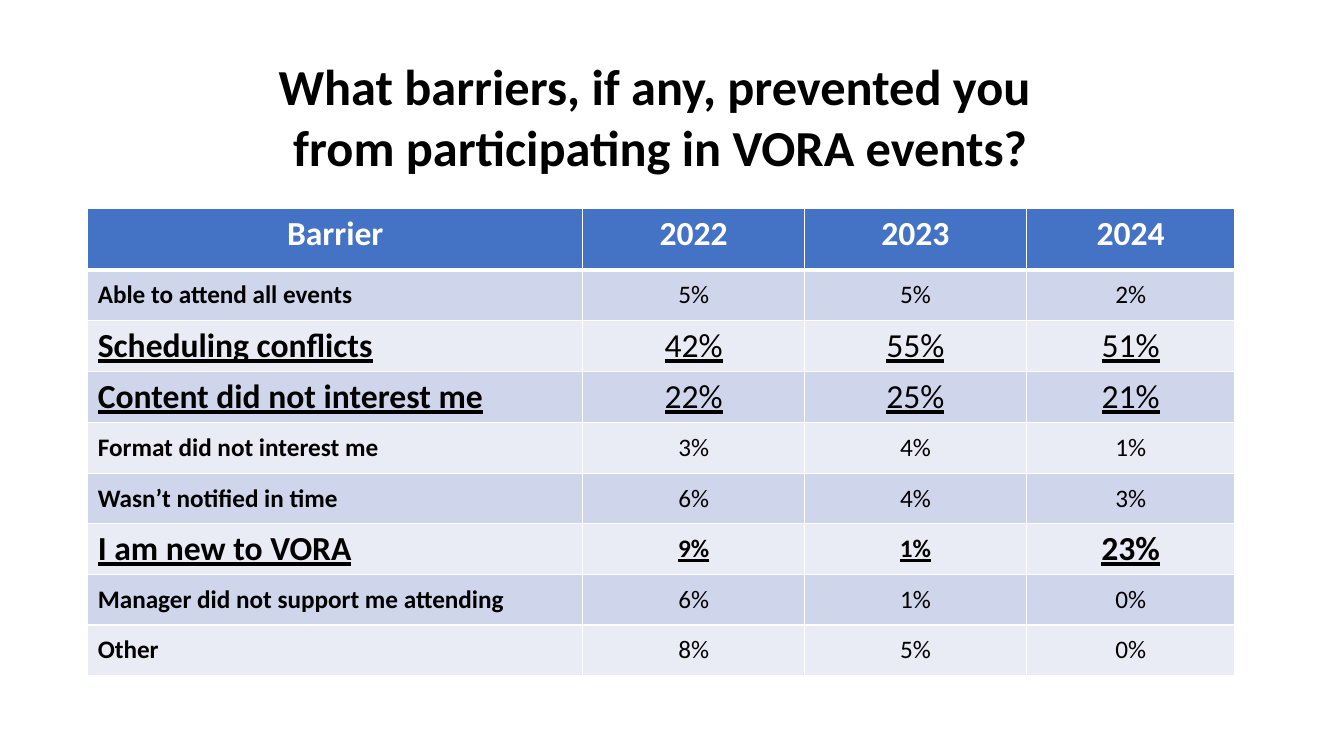
from lxml.etree import SubElement
from pptx import Presentation
from pptx.dml.color import RGBColor
from pptx.enum.text import MSO_ANCHOR, PP_ALIGN
from pptx.oxml.ns import qn
from pptx.util import Inches, Pt

WHITE = RGBColor(0xFF, 0xFF, 0xFF)
BLACK = RGBColor(0x00, 0x00, 0x00)
HEADER_BLUE = RGBColor(0x44, 0x72, 0xC4)
BANDS = [RGBColor(0xCF, 0xD5, 0xEA), RGBColor(0xE9, 0xEB, 0xF5)]

TITLE_LINES = ["What barriers, if any, prevented you ",
               "from participating in VORA events?"]
HEADINGS = ["Barrier", "2022", "2023", "2024"]
BARRIERS = [
    ["Able to attend all events", "5%", "5%", "2%"],
    ["Scheduling conflicts", "42%", "55%", "51%"],
    ["Content did not interest me", "22%", "25%", "21%"],
    ["Format did not interest me", "3%", "4%", "1%"],
    ["Wasn’t notified in time", "6%", "4%", "3%"],
    ["I am new to VORA", "9%", "1%", "23%"],
    ["Manager did not support me attending", "6%", "1%", "0%"],
    ["Other", "8%", "5%", "0%"],
]
HIGHLIGHTED_ROWS = {2, 3, 6}
NEWCOMER_ROW = 6
COLUMN_WIDTHS = [4.91, 2.2, 2.2, 2.07]
HEADER_HEIGHT, ROW_HEIGHT = 0.61, 0.5


class SlideBuilder:
    def __init__(self, slide, font_name="Calibri"):
        self.slide = slide
        self.font_name = font_name

    def format_paragraph(self, paragraph, size, color=BLACK, bold=True,
                         underline=False, alignment=PP_ALIGN.CENTER):
        paragraph.alignment = alignment
        for run in paragraph.runs:
            font = run.font
            font.name, font.size = self.font_name, Pt(size)
            font.bold, font.underline = bold, underline
            font.color.rgb = color

    def title(self, lines, left, top, width, height):
        shape = self.slide.shapes.add_textbox(
            Inches(left), Inches(top), Inches(width), Inches(height))
        shape.text_frame.word_wrap = True
        shape.text_frame.text = "\n".join(lines)
        for paragraph in shape.text_frame.paragraphs:
            self.format_paragraph(paragraph, 36)

    def cell_borders(self, cell, bottom, top):
        properties = cell._tc.get_or_add_tcPr()
        for side, width in (("L", 1), ("R", 1), ("T", top), ("B", bottom)):
            line = SubElement(properties, qn(f"a:ln{side}"), w=str(Pt(width)))
            fill = SubElement(line, qn("a:solidFill"))
            SubElement(fill, qn("a:srgbClr"), val=str(WHITE))

    def cell(self, cell, text, row, column):
        is_header = row == 0
        self.cell_borders(cell, bottom=3 if is_header else 1,
                          top=3 if row == 1 else 1)
        cell.fill.solid()
        cell.fill.fore_color.rgb = HEADER_BLUE if is_header else BANDS[(row - 1) % 2]
        cell.vertical_anchor = MSO_ANCHOR.TOP if is_header else MSO_ANCHOR.MIDDLE
        cell.text_frame.text = text

        # Highlighted rows are larger, except the newcomers' first two years
        highlighted = row in HIGHLIGHTED_ROWS
        large = highlighted and not (row == NEWCOMER_ROW and column in (1, 2))
        is_label = column == 0 and not is_header
        self.format_paragraph(
            cell.text_frame.paragraphs[0],
            size=24 if is_header or large else 18,
            color=WHITE if is_header else BLACK,
            bold=is_header or is_label or row == NEWCOMER_ROW,
            underline=highlighted,
            alignment=PP_ALIGN.LEFT if is_label else PP_ALIGN.CENTER)

    def table(self, rows, left, top):
        height = HEADER_HEIGHT + ROW_HEIGHT * (len(rows) - 1)
        table = self.slide.shapes.add_table(
            len(rows), len(COLUMN_WIDTHS), Inches(left), Inches(top),
            Inches(sum(COLUMN_WIDTHS)), Inches(height)).table
        for column, width in zip(table.columns, COLUMN_WIDTHS):
            column.width = Inches(width)
        for row_index, values in enumerate(rows):
            table.rows[row_index].height = Inches(ROW_HEIGHT if row_index else HEADER_HEIGHT)
            for column_index, text in enumerate(values):
                self.cell(table.cell(row_index, column_index), text,
                          row_index, column_index)


def main():
    presentation = Presentation()
    presentation.slide_width = Inches(13.33)
    presentation.slide_height = Inches(7.5)
    slide = presentation.slides.add_slide(presentation.slide_layouts[6])
    builder = SlideBuilder(slide)

    # Barriers by year
    builder.table([HEADINGS] + BARRIERS, 0.87, 2.07)

    # Question
    builder.title(TITLE_LINES, 0.74, 0.5, 11.62, 1.31)

    presentation.save("out.pptx")


if __name__ == "__main__":
    main()
